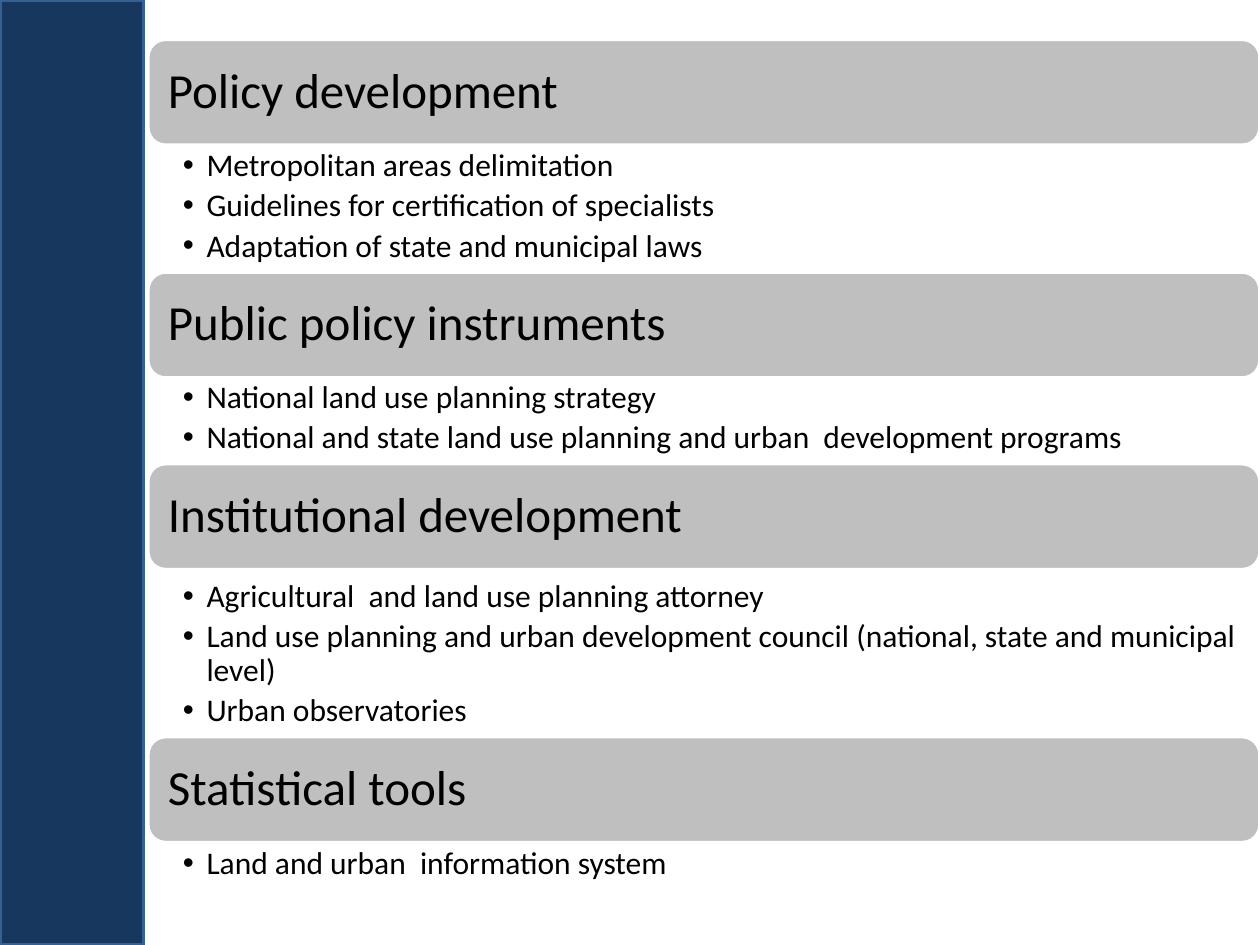
from pptx import Presentation
from pptx.dml.color import RGBColor
from pptx.enum.shapes import MSO_SHAPE as Shape
from pptx.enum.text import MSO_ANCHOR as Anchor, PP_ALIGN as Align
from pptx.oxml.ns import qn
from pptx.util import Pt
from lxml.etree import SubElement

COLORS = {"navy": "17375E", "edge": "376092", "band": "BFBFBF",
          "white": "FFFFFF", "text": "000000"}
FONT = "Calibri"
SLIDE_W, SLIDE_H = 720, 540
BAND_H = 60.5
SECTIONS = [
    (22.5, 83.5, 72, "Policy development",
     ["Metropolitan areas delimitation",
      "Guidelines for certification of specialists",
      "Adaptation of state and municipal laws"]),
    (155.5, 216, 53, "Public policy instruments",
     ["National land use planning strategy",
      "National and state land use planning and urban  development programs"]),
    (265, 329.5, 92, "Institutional development",
     ["Agricultural  and land use planning attorney",
      "Land use planning and urban development council "
      "(national, state and municipal level)",
      "Urban observatories"]),
    (421, 482, 53, "Statistical tools",
     ["Land and urban  information system"]),
]


def color(name):
    return RGBColor.from_string(COLORS[name])


def add_block(slide, kind, box, fill, line):
    block = slide.shapes.add_shape(kind, *map(Pt, box))
    block.shadow.inherit = False
    block.fill.solid()
    block.fill.fore_color.rgb = color(fill)
    block.line.color.rgb = color(line)
    block.line.width = Pt(2)
    return block


def set_insets(frame, left, top, right, bottom):
    frame.word_wrap = True
    frame.margin_left, frame.margin_top = Pt(left), Pt(top)
    frame.margin_right, frame.margin_bottom = Pt(right), Pt(bottom)


def style_paragraph(paragraph, size):
    paragraph.alignment = Align.LEFT
    paragraph.line_spacing = 0.9
    for run in paragraph.runs:
        run.font.name = FONT
        run.font.size = Pt(size)
        run.font.color.rgb = color("text")


def add_bullet(paragraph):
    paragraph.level = 1
    paragraph.space_after = Pt(3.5)
    props = paragraph._p.get_or_add_pPr()
    props.set("marL", str(Pt(13.5)))
    props.set("indent", str(Pt(-13.5)))
    SubElement(props, qn("a:buFont"), typeface="Arial")
    SubElement(props, qn("a:buChar"), char="•")


def add_heading(slide, box, heading):
    band = add_block(slide, Shape.ROUNDED_RECTANGLE, box, "band", "white")
    frame = band.text_frame
    set_insets(frame, 8.5, 8.5, 8.5, 8.5)
    frame.vertical_anchor = Anchor.MIDDLE
    frame.text = heading
    style_paragraph(frame.paragraphs[0], 28)


def add_points(slide, box, points):
    frame = slide.shapes.add_textbox(*map(Pt, box)).text_frame
    set_insets(frame, 20, 2, 10, 2)
    frame.text = "\n".join(points)
    for paragraph in frame.paragraphs:
        style_paragraph(paragraph, 18)
        add_bullet(paragraph)


def add_outline(slide, left, width):
    for band_top, points_top, points_height, heading, points in SECTIONS:
        add_heading(slide, (left, band_top, width, BAND_H), heading)
        add_points(slide, (left, points_top, width, points_height), points)


def main():
    deck = Presentation()
    deck.slide_width, deck.slide_height = Pt(SLIDE_W), Pt(SLIDE_H)
    slide = deck.slides.add_slide(deck.slide_layouts[6])
    add_block(slide, Shape.RECTANGLE, (0, 0, 82, SLIDE_H), "navy", "edge")
    outline_left = 84.5
    add_outline(slide, outline_left, SLIDE_W - outline_left)
    deck.save("out.pptx")


if __name__ == "__main__":
    main()
